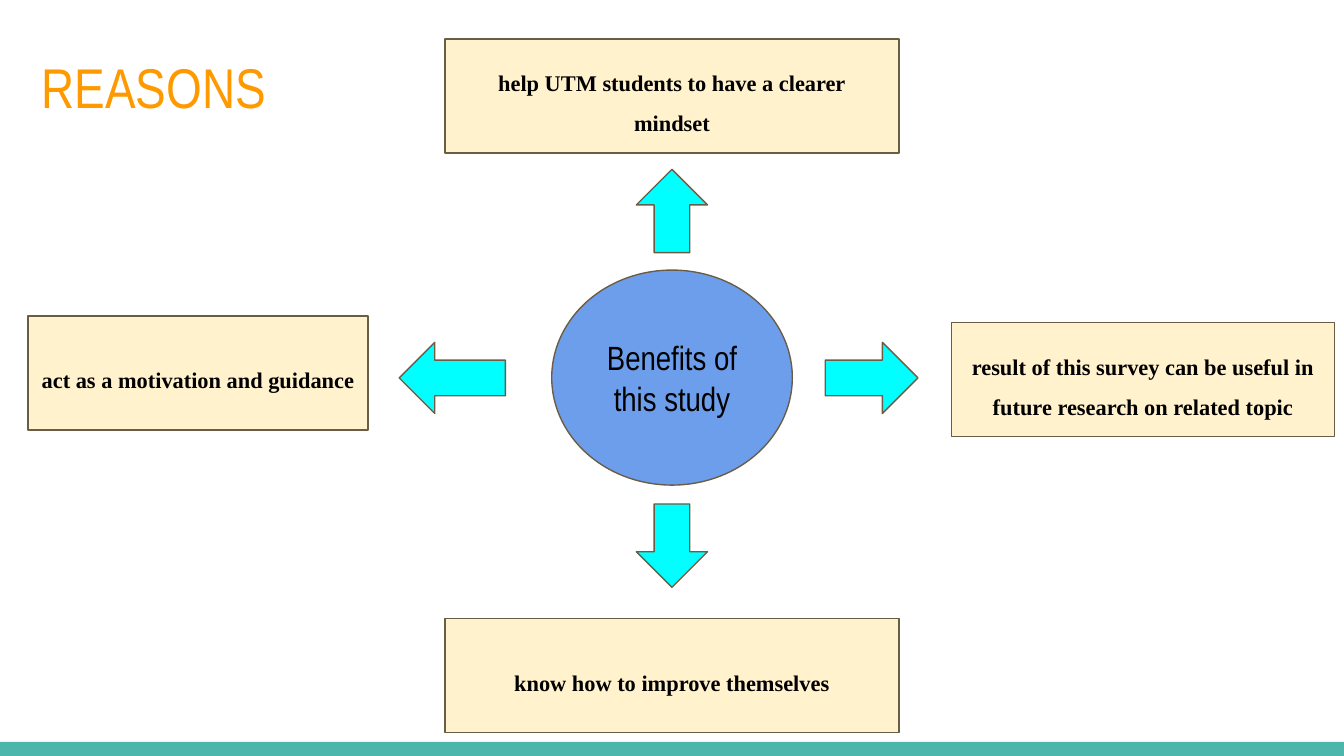
"""Build the REASONS slide: a central idea with four benefits around it."""
from dataclasses import dataclass

from pptx import Presentation
from pptx.dml.color import RGBColor
from pptx.enum.shapes import MSO_SHAPE
from pptx.enum.text import MSO_ANCHOR, PP_ALIGN
from pptx.util import Inches, Pt

RECTANGLE, ELLIPSE = MSO_SHAPE.RECTANGLE, MSO_SHAPE.OVAL
UP, DOWN = MSO_SHAPE.UP_ARROW, MSO_SHAPE.DOWN_ARROW
LEFT, RIGHT = MSO_SHAPE.LEFT_ARROW, MSO_SHAPE.RIGHT_ARROW
MIDDLE, TOP = MSO_ANCHOR.MIDDLE, MSO_ANCHOR.TOP
ALIGN_CENTER, ALIGN_LEFT = PP_ALIGN.CENTER, PP_ALIGN.LEFT

COLORS = {
    "footer": "4DB6AC",
    "hub": "6D9EEB",
    "arrow": "00FFFF",
    "benefit": "FFF2CC",
    "outline": "695D46",
    "text": "000000",
    "title": "FF9900",
}
SLIDE_WIDTH = 10
SLIDE_HEIGHT = SLIDE_WIDTH * 9 / 16
CENTER_X, CENTER_Y = SLIDE_WIDTH / 2, SLIDE_HEIGHT / 2
FOOTER_TOP = 5.52
ARROW_BREADTH = 0.53
BOX_HEIGHT = 0.85


@dataclass(frozen=True)
class Box:
    left: float
    top: float
    width: float
    height: float

    def lengths(self) -> tuple:
        return tuple(map(Inches, (self.left, self.top, self.width, self.height)))


@dataclass(frozen=True)
class TextStyle:
    font: str
    size: float
    color: str = "text"
    bold: bool = False
    spacing: float = 1.0
    alignment: PP_ALIGN = ALIGN_CENTER
    anchor: MSO_ANCHOR = MIDDLE


@dataclass(frozen=True)
class Benefit:
    text: str
    box: Box
    arrow: MSO_SHAPE
    arrow_box: Box


TITLE_STYLE = TextStyle("Arial Narrow", 30, "title", alignment=ALIGN_LEFT, anchor=TOP)
HUB_STYLE = TextStyle("Arial Narrow", 18)
BENEFIT_STYLE = TextStyle("Times New Roman", 12, bold=True, spacing=1.5)


def centered_column(top: float, width: float, height: float) -> Box:
    return Box(CENTER_X - width / 2, top, width, height)


def centered_row(left: float, width: float, height: float) -> Box:
    return Box(left, CENTER_Y - height / 2, width, height)


BENEFITS = (
    Benefit("help UTM students to have a clearer mindset",
            centered_column(0.29, 3.38, BOX_HEIGHT),
            UP, centered_column(1.26, ARROW_BREADTH, 0.62)),
    Benefit("result of this survey can be useful in future research on related topic",
            Box(7.08, 2.4, 2.85, BOX_HEIGHT),
            RIGHT, centered_row(6.14, 0.69, ARROW_BREADTH)),
    Benefit("act as a motivation and guidance",
            Box(0.21, 2.35, 2.53, BOX_HEIGHT),
            LEFT, centered_row(2.97, 0.79, ARROW_BREADTH)),
    Benefit("know how to improve themselves",
            centered_column(4.6, 3.38, BOX_HEIGHT),
            DOWN, centered_column(3.75, ARROW_BREADTH, 0.62)),
)


def rgb(name: str) -> RGBColor:
    return RGBColor.from_string(COLORS[name])


def add_figure(slide, kind: MSO_SHAPE, box: Box, fill: str, outlined: bool = True):
    shape = slide.shapes.add_shape(kind, *box.lengths())
    shape.shadow.inherit = False
    shape.fill.solid()
    shape.fill.fore_color.rgb = rgb(fill)
    if outlined:
        shape.line.color.rgb = rgb("outline")
        shape.line.width = Pt(0.75)
    else:
        shape.line.fill.background()
    return shape


def write(shape, text: str, style: TextStyle) -> None:
    frame = shape.text_frame
    frame.text = text
    frame.word_wrap = True
    frame.vertical_anchor = style.anchor
    frame.margin_left = frame.margin_right = Inches(0.1)
    frame.margin_top = frame.margin_bottom = Inches(0.1)
    paragraph = frame.paragraphs[0]
    paragraph.alignment = style.alignment
    paragraph.line_spacing = style.spacing
    paragraph.font.name = style.font
    paragraph.font.size = Pt(style.size)
    paragraph.font.bold = style.bold
    paragraph.font.color.rgb = rgb(style.color)


def add_title(slide, text: str, box: Box) -> None:
    title = slide.shapes.title
    title.left, title.top, title.width, title.height = box.lengths()
    write(title, text, TITLE_STYLE)


def main() -> None:
    presentation = Presentation()
    presentation.slide_width = Inches(SLIDE_WIDTH)
    presentation.slide_height = Inches(SLIDE_HEIGHT)
    slide = presentation.slides.add_slide(presentation.slide_layouts.get_by_name("Title Only"))

    footer_box = Box(0, FOOTER_TOP, SLIDE_WIDTH, SLIDE_HEIGHT - FOOTER_TOP)
    add_figure(slide, RECTANGLE, footer_box, "footer", outlined=False)
    hub = add_figure(slide, ELLIPSE, centered_column(2.01, 1.79, 1.6), "hub")
    write(hub, "Benefits of this study", HUB_STYLE)
    for benefit in BENEFITS:
        add_figure(slide, benefit.arrow, benefit.arrow_box, "arrow")
        write(add_figure(slide, RECTANGLE, benefit.box, "benefit"), benefit.text, BENEFIT_STYLE)
    add_title(slide, "REASONS", Box(0.21, 0.29, 1.97, 0.74))

    presentation.save("out.pptx")


if __name__ == "__main__":
    main()
